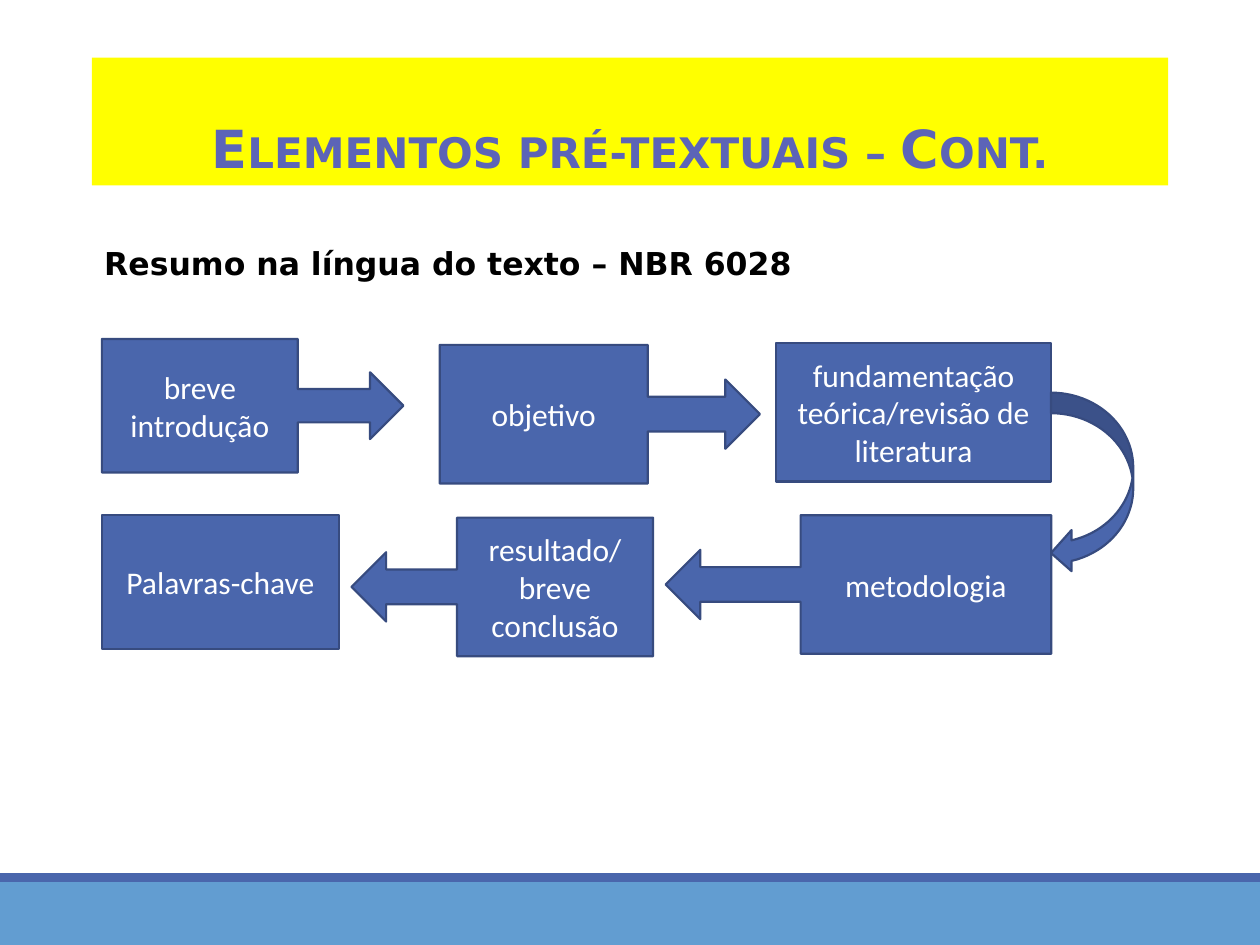
"""Build a slide showing the sequence of an abstract as a flow of boxes."""
import pptx
import pptx.dml.color
import pptx.enum.shapes
import pptx.enum.text
import pptx.util

Pt = pptx.util.Pt
RGBColor = pptx.dml.color.RGBColor
SHAPE = pptx.enum.shapes.MSO_SHAPE
ALIGN = pptx.enum.text.PP_ALIGN
ANCHOR = pptx.enum.text.MSO_ANCHOR

BLUE = RGBColor(0x4A, 0x66, 0xAC)
DARK_BLUE = RGBColor(0x37, 0x4B, 0x7F)
LIGHT_BLUE = RGBColor(0x62, 0x9D, 0xD1)
VIOLET = RGBColor(0x5C, 0x64, 0xB7)
YELLOW = RGBColor(0xFF, 0xFF, 0x00)
WHITE = RGBColor(0xFF, 0xFF, 0xFF)
BLACK = RGBColor(0x00, 0x00, 0x00)


def add_block(kind, left, top, width, height, fill, line=None):
    sp = s.shapes.add_shape(kind, Pt(left), Pt(top), Pt(width), Pt(height))
    sp.shadow.inherit = False
    sp.fill.solid()
    sp.fill.fore_color.rgb = fill
    if line is None:
        sp.line.fill.background()
    else:
        sp.line.color.rgb = line
        sp.line.width = Pt(1.25)
    return sp


def write(sp, text, size, font, color, align, bold=False):
    tf = sp.text_frame
    tf.word_wrap = True
    tf.text = text
    for p in tf.paragraphs:
        p.alignment = align
        for r in p.runs:
            r.font.size = Pt(size)
            r.font.name = font
            r.font.bold = bold
            r.font.color.rgb = color
    return tf


prs = pptx.Presentation()
prs.slide_width, prs.slide_height = Pt(720), Pt(540)
s = prs.slides.add_slide(prs.slide_layouts[6])

add_block(SHAPE.RECTANGLE, 0, 504, 720, 36, LIGHT_BLUE)
add_block(SHAPE.RECTANGLE, 0, 499, 720, 5, BLUE)

title = add_block(SHAPE.RECTANGLE, 52.5, 33, 615, 73, YELLOW)
tf = write(title, "Elementos pré-textuais – Cont.", 30, "DejaVu Sans", VIOLET, ALIGN.CENTER, True)
tf.vertical_anchor = ANCHOR.BOTTOM
tf.paragraphs[0].runs[0].font._element.set("cap", "small")

subtitle = s.shapes.add_textbox(Pt(52.5), Pt(136), Pt(507), Pt(29))
write(subtitle, "Resumo na língua do texto – NBR 6028", 18, "DejaVu Sans", BLACK, ALIGN.LEFT, True)

steps = [
    (SHAPE.RIGHT_ARROW_CALLOUT, 58.25, 193.7, 172.3, 76.3, "breve introdução"),
    (SHAPE.RIGHT_ARROW_CALLOUT, 251.3, 197.1, 183, 79.2, "objetivo"),
    (SHAPE.RECTANGLE, 443.4, 196, 157.3, 79.2, "fundamentação teórica/revisão de literatura"),
    (SHAPE.CURVED_LEFT_ARROW, 600.6, 224.4, 47, 103.4, ""),
    (SHAPE.LEFT_ARROW_CALLOUT, 380.4, 294.4, 220.3, 79.2, "metodologia"),
    (SHAPE.LEFT_ARROW_CALLOUT, 200.9, 295.8, 172.3, 79.2, "resultado/\nbreve conclusão"),
    (SHAPE.RECTANGLE, 58.25, 294.4, 135.5, 76.3, "Palavras-chave"),
]
for kind, left, top, width, height, text in steps:
    sp = add_block(kind, left, top, width, height, BLUE, DARK_BLUE)
    if text:
        tf = write(sp, text, 18, "Calibri", WHITE, ALIGN.CENTER)
        tf.vertical_anchor = ANCHOR.MIDDLE

prs.save("out.pptx")
